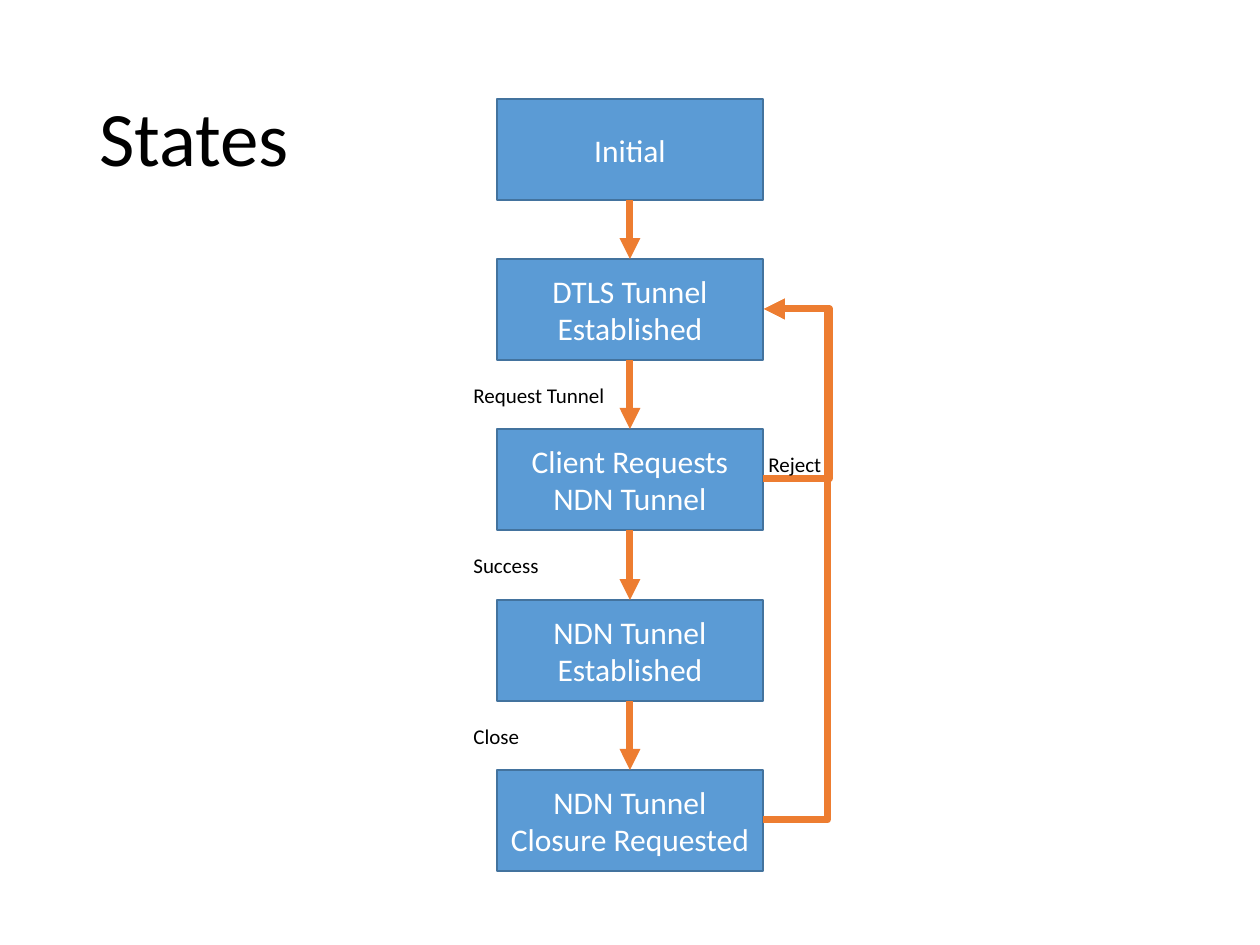
import pptx
import pptx.dml.color
import pptx.enum.shapes
import pptx.enum.text
import pptx.oxml.ns
import pptx.util
from dataclasses import dataclass
from lxml import etree

PX = 914400 // 126
SHAPES = pptx.enum.shapes
TEXT = pptx.enum.text


@dataclass(frozen=True)
class Theme:
    font: str = "Calibri"
    ink: str = "000000"
    state_fill: str = "5B9BD5"
    state_border: str = "43739E"
    state_ink: str = "FFFFFF"
    arrow: str = "ED7D31"
    title_size: int = 44
    state_size: int = 18
    label_size: int = 12
    border_width: int = 1
    arrow_width: int = 4


THEME = Theme()

STATE_LEFT, STATE_WIDTH, STATE_HEIGHT = 497, 266, 101
STATES = [
    ("Initial", 99),
    ("DTLS Tunnel Established", 259),
    ("Client Requests NDN Tunnel", 429),
    ("NDN Tunnel Established", 600),
    ("NDN Tunnel Closure Requested", 770),
]
LABELS = [
    ("Request Tunnel", 461, 376, 156),
    ("Success", 461, 546, 96),
    ("Reject", 756, 445, 79),
    ("Close", 461, 717, 79),
]
LABEL_HEIGHT = 38
BOTTOM_SITE, TOP_SITE = 2, 0


def px(*lengths):
    return [pptx.util.Emu(length * PX) for length in lengths]


def rgb(value):
    return pptx.dml.color.RGBColor.from_string(value)


def write(shape, text, size, color, paragraph_format, frame_format):
    frame = shape.text_frame
    frame.text = text
    paragraph = frame.paragraphs[0]
    font = paragraph.runs[0].font
    font.color.rgb = rgb(color)
    font_format = {"name": THEME.font, "size": pptx.util.Pt(size)}
    for target, values in (
        (frame, frame_format),
        (paragraph, paragraph_format),
        (font, font_format),
    ):
        for name, value in values.items():
            setattr(target, name, value)


def add_title(slide, text):
    title = slide.shapes.add_textbox(*px(87, 50, 1086, 183))
    write(title, text, THEME.title_size, THEME.ink, {"line_spacing": 0.9},
          {"word_wrap": True, "vertical_anchor": TEXT.MSO_ANCHOR.MIDDLE})


def add_state(slide, text, top):
    state = slide.shapes.add_shape(
        SHAPES.MSO_SHAPE.RECTANGLE,
        *px(STATE_LEFT, top, STATE_WIDTH, STATE_HEIGHT))
    state.shadow.inherit = False
    state.fill.solid()
    state.fill.fore_color.rgb = rgb(THEME.state_fill)
    state.line.color.rgb = rgb(THEME.state_border)
    state.line.width = pptx.util.Pt(THEME.border_width)
    write(state, text, THEME.state_size, THEME.state_ink,
          {"alignment": TEXT.PP_ALIGN.CENTER},
          {"word_wrap": True, "vertical_anchor": TEXT.MSO_ANCHOR.MIDDLE})
    return state


def add_label(slide, text, left, top, width):
    label = slide.shapes.add_textbox(*px(left, top, width, LABEL_HEIGHT))
    write(label, text, THEME.label_size, THEME.ink, {},
          {"word_wrap": False,
           "auto_size": TEXT.MSO_AUTO_SIZE.SHAPE_TO_FIT_TEXT})


def add_arrow(slide, kind, *ends):
    arrow = slide.shapes.add_connector(kind, *px(*ends))
    arrow.line.color.rgb = rgb(THEME.arrow)
    arrow.line.width = pptx.util.Pt(THEME.arrow_width)
    qn = pptx.oxml.ns.qn
    etree.SubElement(arrow.line._get_or_add_ln(), qn("a:tailEnd"),
                     type="triangle")
    etree.SubElement(arrow._element.spPr, qn("a:effectLst"))
    return arrow


def add_step(slide, source, target):
    step = add_arrow(slide, SHAPES.MSO_CONNECTOR.STRAIGHT, 0, 0, 0, 0)
    step.begin_connect(source, BOTTOM_SITE)
    step.end_connect(target, TOP_SITE)


def add_return(slide, source_top, target_top, lane):
    """Lead back from one state to an earlier one along a lane at x = lane."""
    side = STATE_LEFT + STATE_WIDTH
    middle = STATE_HEIGHT // 2
    span = 1  # the bend is a share of the width, so the width cannot be zero
    arrow = add_arrow(slide, SHAPES.MSO_CONNECTOR.ELBOW,
                      side, source_top + middle,
                      side + span, target_top + middle)
    qn = pptx.oxml.ns.qn
    geometry = arrow._element.spPr.find(qn("a:prstGeom"))
    adjustments = geometry.find(qn("a:avLst"))
    bend = (lane - side) * 100000 // span
    etree.SubElement(adjustments, qn("a:gd"), name="adj1", fmla=f"val {bend}")


def main():
    deck = pptx.Presentation()
    deck.slide_width, deck.slide_height = px(1260, 945)
    slide = deck.slides.add_slide(deck.slide_layouts[6])

    add_title(slide, "States")
    states = [add_state(slide, text, top) for text, top in STATES]
    for source, target in zip(states, states[1:]):
        add_step(slide, source, target)

    tops = [top for _, top in STATES]
    add_return(slide, tops[2], tops[1], lane=830)
    add_return(slide, tops[4], tops[1], lane=828)
    for label in LABELS:
        add_label(slide, *label)

    deck.save("out.pptx")


if __name__ == "__main__":
    main()
